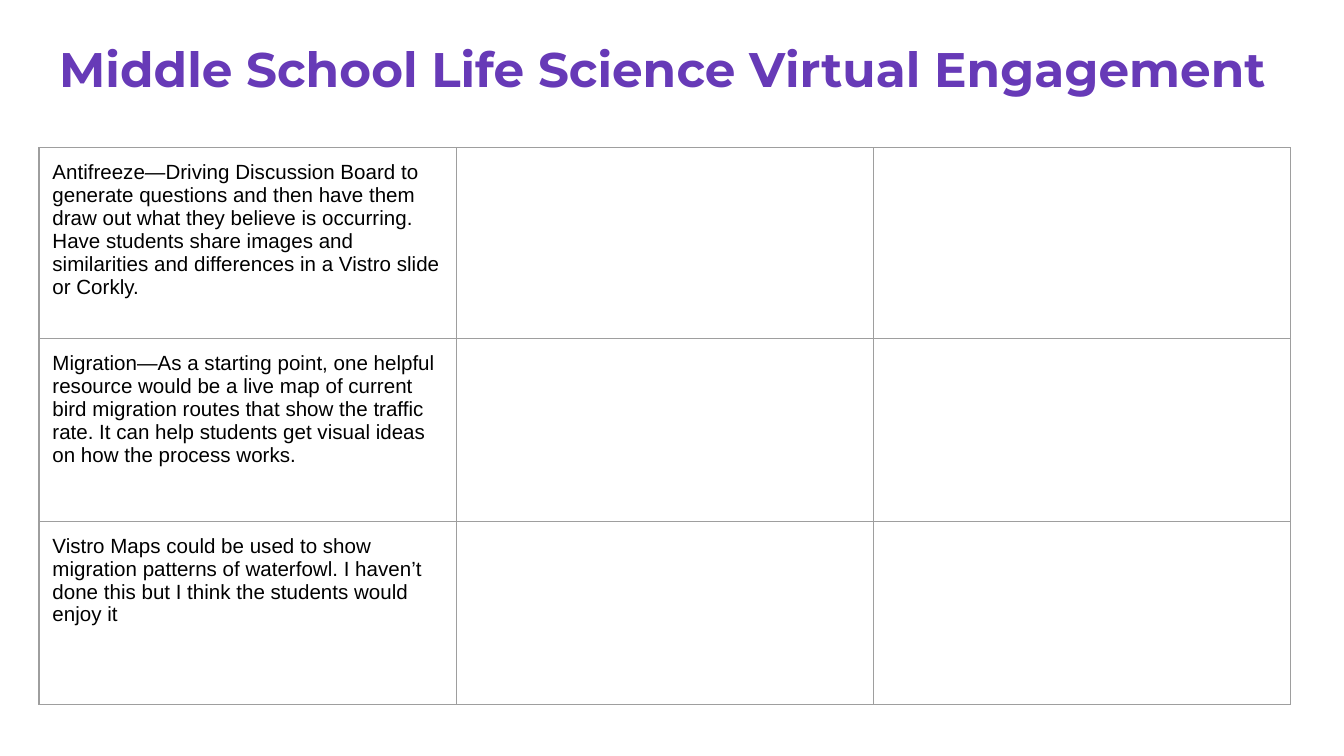
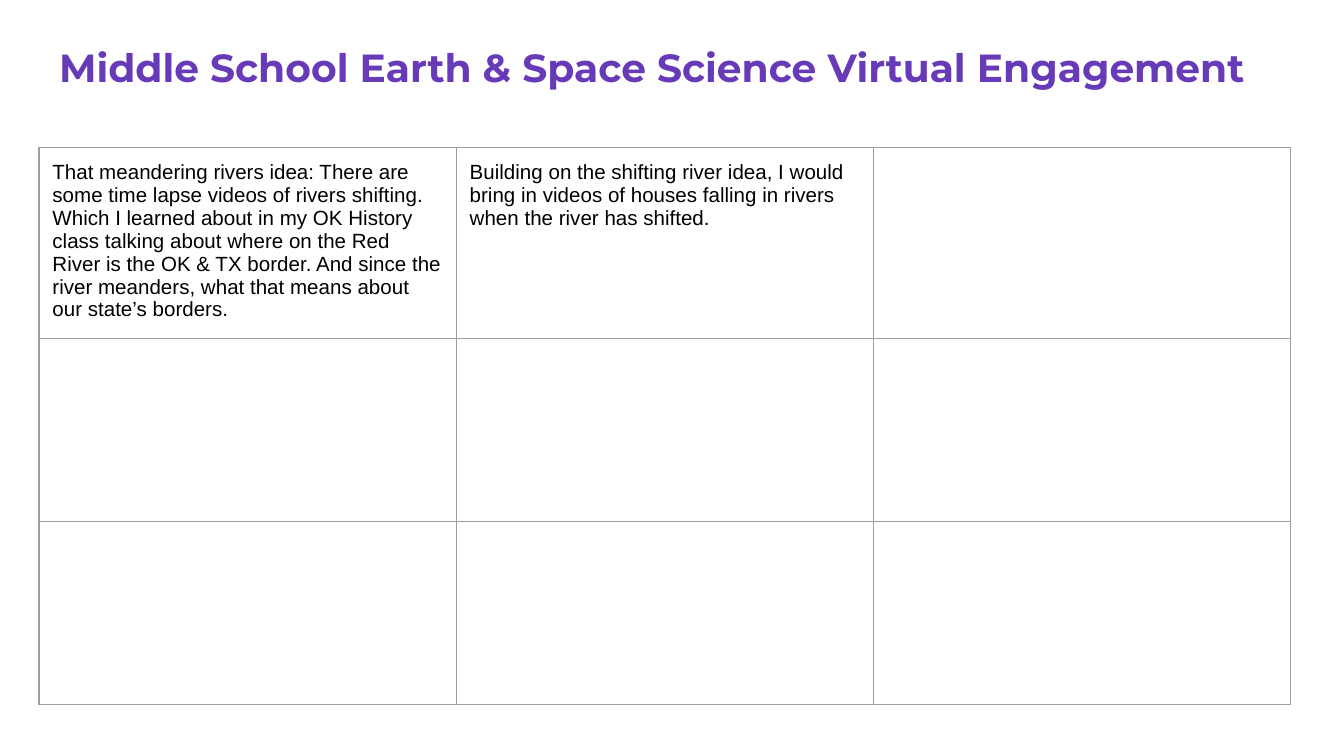
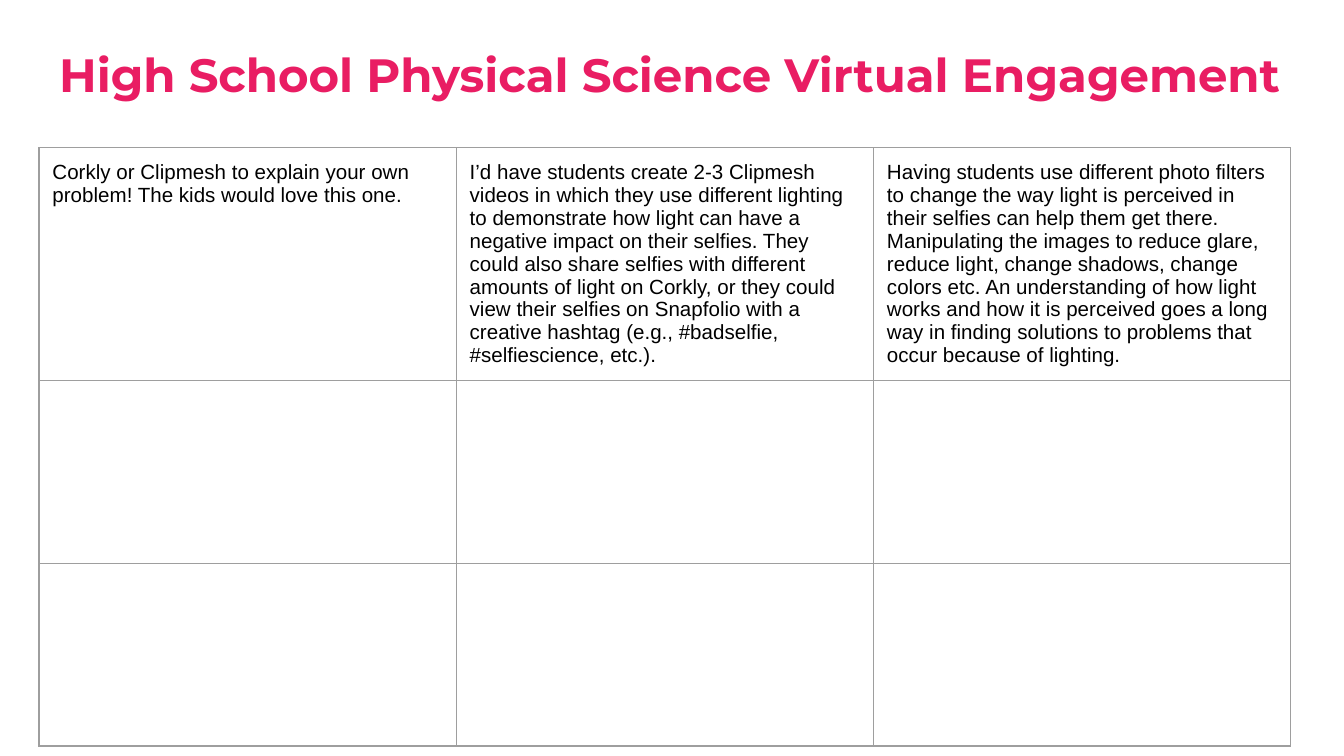
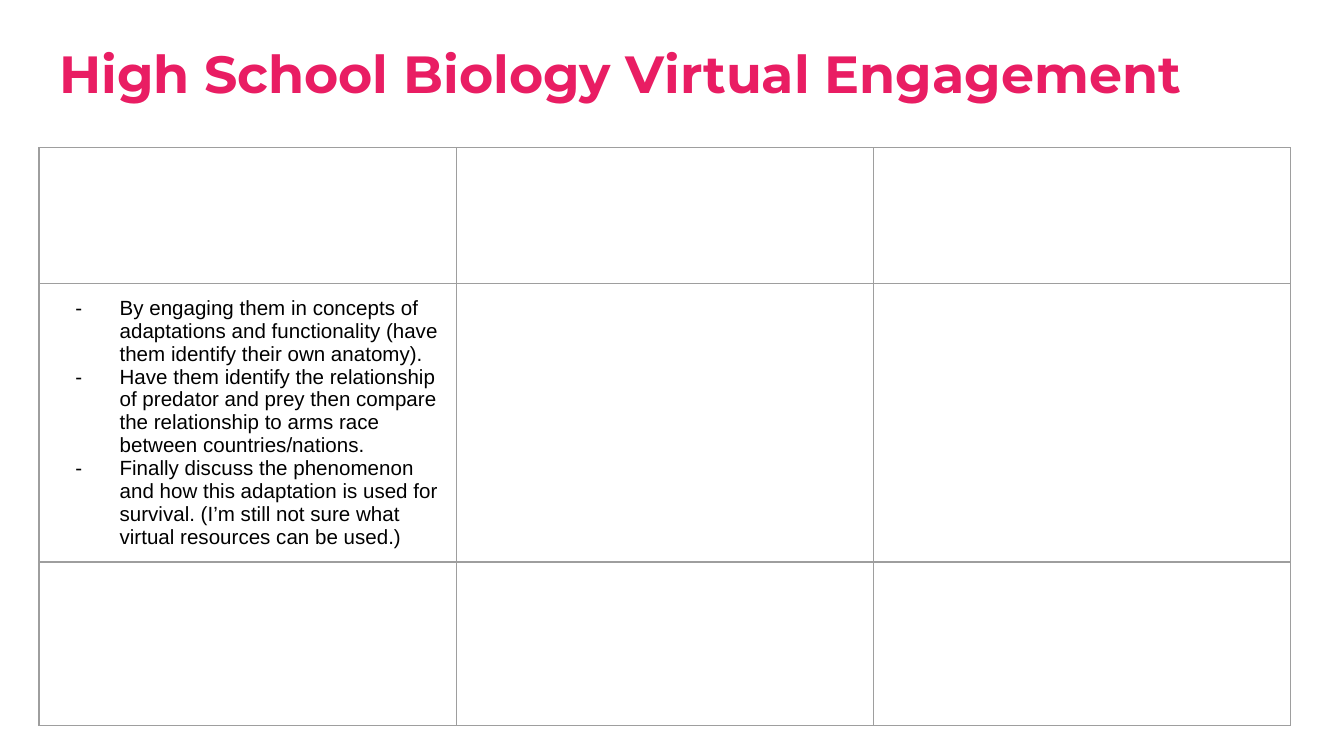
"""Build four slides of virtual engagement ideas, each a title over a three by three grid."""
from dataclasses import dataclass

from lxml import etree
from pptx import Presentation
from pptx.dml.color import RGBColor
from pptx.enum.text import MSO_ANCHOR, MSO_AUTO_SIZE, PP_ALIGN
from pptx.oxml.ns import qn
from pptx.presentation import Presentation as Deck
from pptx.slide import Slide
from pptx.table import _Cell as Cell
from pptx.text.text import TextFrame, _Paragraph as Paragraph
from pptx.util import Pt

LEFT = PP_ALIGN.LEFT
TOP = MSO_ANCHOR.TOP
NO_AUTOFIT = MSO_AUTO_SIZE.NONE
TITLE_ONLY = 5
EMU_PER_PX = 4572
SLIDE_WIDTH, SLIDE_HEIGHT = 2000, 1125
TITLE_LEFT, TITLE_WIDTH, TITLE_HEIGHT = 68, 1864, 126
GRID_LEFT, GRID_TOP, COLUMN_WIDTH, COLUMN_COUNT = 58, 220, 621, 3
INSET = 20
BULLET_MARGIN, BULLET_INDENT = 100, -66
EVEN_ROWS = (284, 272, 272)


@dataclass(frozen=True)
class Theme:
    """Colours, fonts and type sizes shared by the slides."""

    middle_school: str = "673AB7"
    high_school: str = "E91D63"
    text: str = "000000"
    border: str = "9E9E9E"
    background: str = "FFFFFF"
    title_font: str = "Montserrat"
    body_font: str = "Arial"
    body_size: int = 11
    border_width: float = 0.75


THEME = Theme()


@dataclass(frozen=True)
class Idea:
    """The paragraphs of one grid cell."""

    row: int
    column: int
    paragraphs: tuple[str, ...]
    bulleted: bool = False


@dataclass(frozen=True)
class Board:
    """One slide: its title and its grid of ideas."""

    title: str
    title_top: int
    title_size: int
    color: str
    ideas: tuple[Idea, ...]
    row_heights: tuple[int, ...] = EVEN_ROWS


BOARDS = (
    Board("Middle School Life Science Virtual Engagement", 38, 26, THEME.middle_school, (
        Idea(0, 0, (
            "Antifreeze—Driving Discussion Board to generate questions and then have them "
            "draw out what they believe is occurring. Have students share images and "
            "similarities and differences in a Vistro slide or Corkly.",)),
        Idea(1, 0, (
            "Migration—As a starting point, one helpful resource would be a live map of "
            "current bird migration routes that show the traffic rate. It can help students "
            "get visual ideas on how the process works.",)),
        Idea(2, 0, (
            "Vistro Maps could be used to show migration patterns of waterfowl. I haven’t "
            "done this but I think the students would enjoy it",)),
    )),
    Board("Middle School Earth & Space Science Virtual Engagement", 44, 21, THEME.middle_school, (
        Idea(0, 0, (
            "That meandering rivers idea: There are some time lapse videos of rivers "
            "shifting. Which I learned about in my OK History class talking about where on "
            "the Red River is the OK & TX border. And since the river meanders, what that "
            "means about our state’s borders.",)),
        Idea(0, 1, (
            "Building on the shifting river idea, I would bring in videos of houses falling "
            "in rivers when the river has shifted.",)),
    )),
    Board("High School Physical Science Virtual Engagement", 48, 25, THEME.high_school, (
        Idea(0, 0, (
            "Corkly or Clipmesh to explain your own problem! The kids would love this one.",)),
        Idea(0, 1, (
            "I’d have students create 2-3 Clipmesh videos in which they use different "
            "lighting to demonstrate how light can have a negative impact on their selfies. "
            "They could also share selfies with different amounts of light on Corkly, or "
            "they could view their selfies on Snapfolio with a creative hashtag (e.g., "
            "#badselfie, #selfiescience, etc.).",)),
        Idea(0, 2, (
            "Having students use different photo filters to change the way light is "
            "perceived in their selfies can help them get there. Manipulating the images to "
            "reduce glare, reduce light, change shadows, change colors etc. An "
            "understanding of how light works and how it is perceived goes a long way in "
            "finding solutions to problems that occur because of lighting.",)),
    )),
    Board("High School Biology Virtual Engagement", 42, 28, THEME.high_school, (
        Idea(1, 0, (
            "By engaging them in concepts of adaptations and functionality (have them "
            "identify their own anatomy).",
            "Have them identify the relationship of predator and prey then compare the "
            "relationship to arms race between countries/nations.",
            "Finally discuss the phenomenon and how this adaptation is used for survival. "
            "(I’m still not sure what virtual resources can be used.)",
        ), bulleted=True),
    ), (202, 406, 244)),
)


def px(length: int) -> int:
    """Turn a length in px into EMU."""
    return length * EMU_PER_PX


def set_insets(box: TextFrame | Cell) -> None:
    """Give a text frame or a cell the shared inset on every side."""
    box.margin_left = box.margin_right = box.margin_top = box.margin_bottom = px(INSET)


def add_text(paragraph: Paragraph, text: str, font: str, size: int, color: str,
             bold: bool = False) -> None:
    """Add one formatted run to a left-aligned paragraph."""
    paragraph.alignment = LEFT
    run = paragraph.add_run()
    run.text = text
    run.font.name = font
    run.font.size = Pt(size)
    run.font.bold = bold
    run.font.color.rgb = RGBColor.from_string(color)


def add_bullet(paragraph: Paragraph) -> None:
    """Give a paragraph a hanging dash."""
    properties = paragraph._p.get_or_add_pPr()
    properties.set("marL", str(px(BULLET_MARGIN)))
    properties.set("indent", str(px(BULLET_INDENT)))
    color = etree.SubElement(properties, qn("a:buClr"))
    etree.SubElement(color, qn("a:srgbClr"), val=THEME.text)
    etree.SubElement(properties, qn("a:buFont"), typeface=THEME.body_font)
    etree.SubElement(properties, qn("a:buChar"), char="-")


def format_cell(cell: Cell) -> None:
    """Set the borders, the empty fill and the insets of a cell."""
    properties = cell._tc.get_or_add_tcPr()
    for side in ("a:lnL", "a:lnR", "a:lnT", "a:lnB"):
        line = etree.SubElement(properties, qn(side), w=str(Pt(THEME.border_width)))
        fill = etree.SubElement(line, qn("a:solidFill"))
        etree.SubElement(fill, qn("a:srgbClr"), val=THEME.border)
    cell.fill.background()
    cell.vertical_anchor = TOP
    set_insets(cell)


def fill_cell(cell: Cell, idea: Idea) -> None:
    """Write the paragraphs of an idea into its cell."""
    frame = cell.text_frame
    for index, text in enumerate(idea.paragraphs):
        paragraph = frame.add_paragraph() if index else frame.paragraphs[0]
        if idea.bulleted:
            add_bullet(paragraph)
        add_text(paragraph, text, THEME.body_font, THEME.body_size, THEME.text)


def add_title(slide: Slide, board: Board) -> None:
    """Place and format the title placeholder."""
    title = slide.shapes.title
    title.left, title.top = px(TITLE_LEFT), px(board.title_top)
    title.width, title.height = px(TITLE_WIDTH), px(TITLE_HEIGHT)
    frame = title.text_frame
    frame.word_wrap = True
    frame.auto_size = NO_AUTOFIT
    frame.vertical_anchor = TOP
    set_insets(frame)
    add_text(frame.paragraphs[0], board.title, THEME.title_font, board.title_size,
             board.color, bold=True)


def add_grid(slide: Slide, board: Board) -> None:
    """Add the table of ideas."""
    heights = board.row_heights
    table = slide.shapes.add_table(
        len(heights), COLUMN_COUNT, px(GRID_LEFT), px(GRID_TOP),
        px(COLUMN_WIDTH * COLUMN_COUNT), px(sum(heights))).table
    table.first_row = table.horz_banding = False
    for column in table.columns:
        column.width = px(COLUMN_WIDTH)
    for row, height in zip(table.rows, heights):
        row.height = px(height)
    for cell in table.iter_cells():
        format_cell(cell)
    for idea in board.ideas:
        fill_cell(table.cell(idea.row, idea.column), idea)


def add_board(presentation: Deck, board: Board) -> None:
    """Add one slide with its title and grid."""
    slide = presentation.slides.add_slide(presentation.slide_layouts[TITLE_ONLY])
    background = slide.background.fill
    background.solid()
    background.fore_color.rgb = RGBColor.from_string(THEME.background)
    add_title(slide, board)
    add_grid(slide, board)


def main() -> None:
    """Build and save the presentation."""
    presentation = Presentation()
    presentation.slide_width, presentation.slide_height = px(SLIDE_WIDTH), px(SLIDE_HEIGHT)
    for board in BOARDS:
        add_board(presentation, board)
    presentation.save("out.pptx")


if __name__ == "__main__":
    main()
